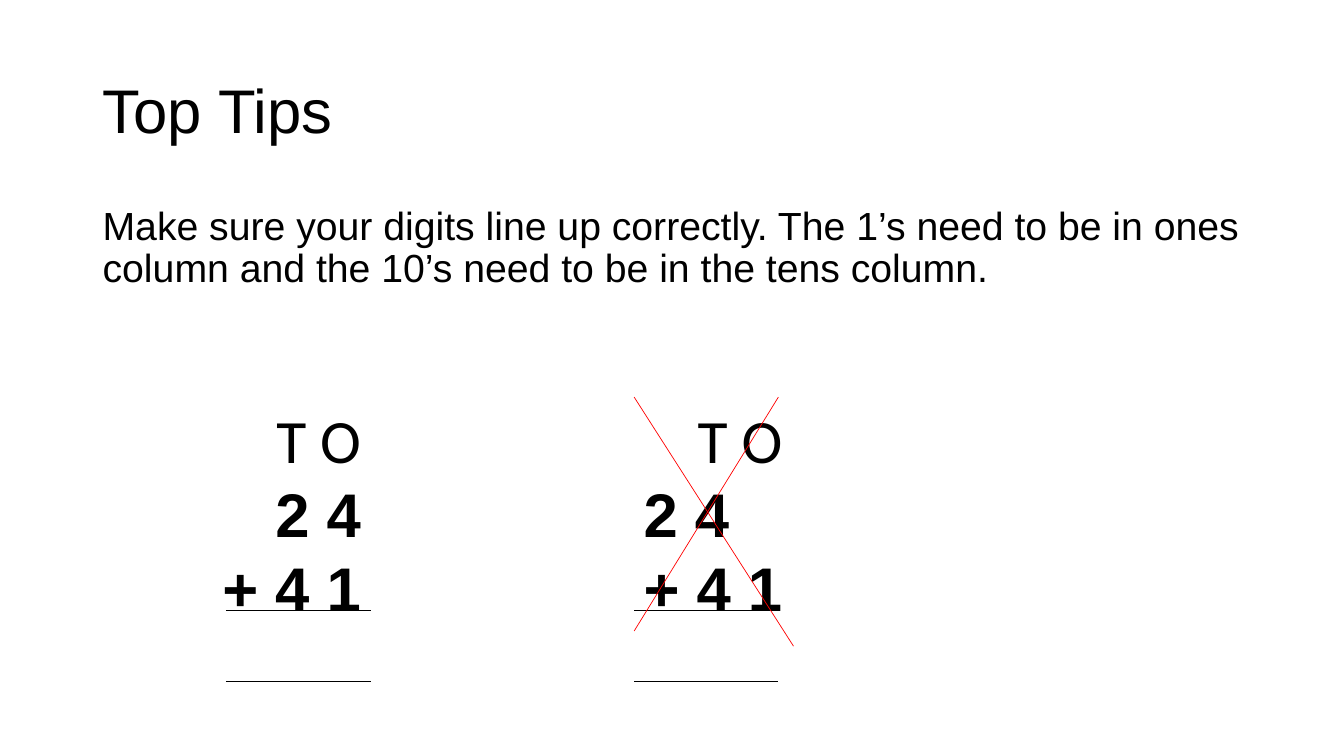
from dataclasses import dataclass

from lxml import etree
from pptx import Presentation
from pptx.dml.color import RGBColor
from pptx.enum.shapes import MSO_CONNECTOR
from pptx.enum.text import MSO_ANCHOR, MSO_AUTO_SIZE, PP_ALIGN
from pptx.oxml.ns import qn
from pptx.util import Inches, Pt

LEFT, RIGHT = PP_ALIGN.LEFT, PP_ALIGN.RIGHT
TOP, MIDDLE = MSO_ANCHOR.TOP, MSO_ANCHOR.MIDDLE
NO_AUTOFIT, FIT_SHAPE = MSO_AUTO_SIZE.NONE, MSO_AUTO_SIZE.SHAPE_TO_FIT_TEXT
STRAIGHT = MSO_CONNECTOR.STRAIGHT

COLORS = {"text": "000000", "cross": "FF0000"}
HEADING_FORMAT = {"name": "Calibri", "size": Pt(44), "bold": False}
DIGIT_FORMAT = {"name": "Arial", "size": Pt(44), "bold": True}
TITLE_FORMAT = {"name": "Arial", "size": Pt(44), "bold": False}
BODY_FORMAT = {"name": "Arial", "size": Pt(28), "bold": False}

SUM_TOP, SUM_HEIGHT = 3.94, 2.32
RULE_TOPS = (6.06, 6.76)


@dataclass
class ColumnSum:
    left: float
    width: float
    rule_left: float
    rule_right: float
    digit_align: PP_ALIGN


SUMS = [
    ColumnSum(2.09, 1.59, 2.24, 3.68, RIGHT),
    ColumnSum(6.25, 1.61, 6.29, 7.72, LEFT),
]
CROSS = [(7.72, 3.94, 6.29, 6.26), (6.29, 3.94, 7.87, 6.41)]


def write(p, text: str, font_format: dict, **paragraph_format) -> None:
    for name, value in paragraph_format.items():
        setattr(p, name, value)
    r = p.add_run()
    r.text = text
    for name, value in font_format.items():
        setattr(r.font, name, value)
    r.font.color.rgb = RGBColor.from_string(COLORS["text"])


def set_frame(tf, wrap: bool, anchor: MSO_ANCHOR, auto_size: MSO_AUTO_SIZE) -> None:
    tf.word_wrap = wrap
    tf.vertical_anchor = anchor
    tf.auto_size = auto_size


def add_line(s, x1: float, y1: float, x2: float, y2: float, color: str) -> None:
    line = s.shapes.add_connector(
        STRAIGHT, Inches(x1), Inches(y1), Inches(x2), Inches(y2))
    line.line.color.rgb = RGBColor.from_string(COLORS[color])
    line.line.width = Pt(0.5)
    etree.SubElement(line._element.spPr, qn("a:effectLst"))


def add_title(s, text: str) -> None:
    title = s.shapes.title
    title.left, title.top = Inches(0.92), Inches(0.4)
    title.width, title.height = Inches(11.5), Inches(1.45)
    set_frame(title.text_frame, True, MIDDLE, NO_AUTOFIT)
    write(title.text_frame.paragraphs[0], text, TITLE_FORMAT,
          alignment=LEFT, line_spacing=0.9)


def add_body(s, text: str) -> None:
    sp = s.shapes.add_textbox(Inches(0.92), Inches(2), Inches(11.5), Inches(4.76))
    set_frame(sp.text_frame, True, TOP, NO_AUTOFIT)
    write(sp.text_frame.paragraphs[0], text, BODY_FORMAT,
          alignment=LEFT, line_spacing=0.9, space_before=Pt(10))


def add_sum(s, column_sum: ColumnSum) -> None:
    """Draw the column headings, both numbers and the two answer rules."""
    sp = s.shapes.add_textbox(Inches(column_sum.left), Inches(SUM_TOP),
                              Inches(column_sum.width), Inches(SUM_HEIGHT))
    tf = sp.text_frame
    set_frame(tf, False, TOP, FIT_SHAPE)
    write(tf.paragraphs[0], "T O", HEADING_FORMAT, alignment=RIGHT)
    for digits in ("2 4", "+ 4 1"):
        write(tf.add_paragraph(), digits, DIGIT_FORMAT,
              alignment=column_sum.digit_align)
    for y in RULE_TOPS:
        add_line(s, column_sum.rule_left, y, column_sum.rule_right, y, "text")


def main() -> None:
    prs = Presentation()
    prs.slide_width, prs.slide_height = Inches(13.33), Inches(7.5)
    s = prs.slides.add_slide(prs.slide_layouts[5])
    add_title(s, "Top Tips")
    add_body(s, "Make sure your digits line up correctly. The 1’s need to be in "
                "ones column and the 10’s need to be in the tens column.")
    for column_sum in SUMS:
        add_sum(s, column_sum)
    for stroke in CROSS:
        add_line(s, *stroke, "cross")
    prs.save("out.pptx")


if __name__ == "__main__":
    main()
